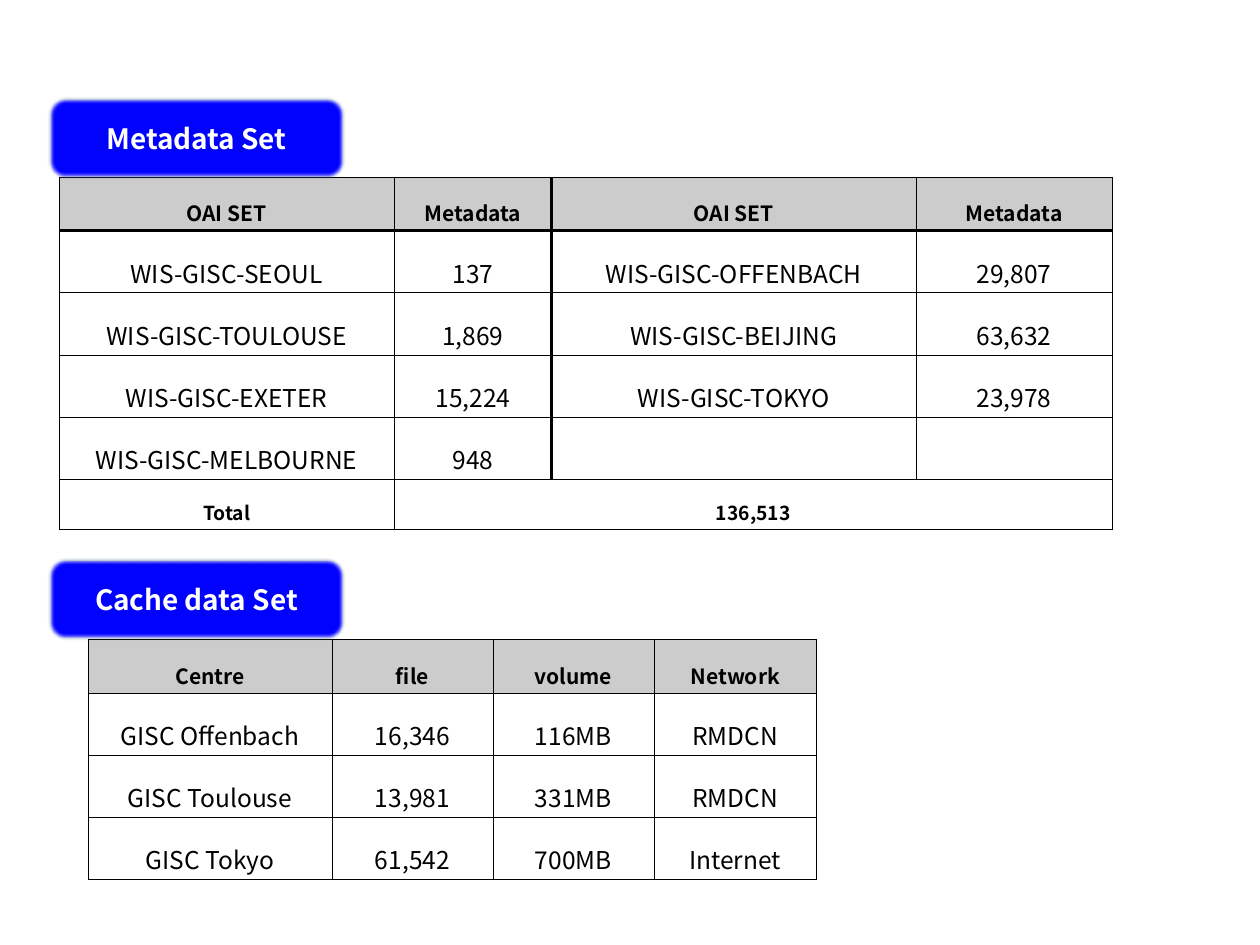
from lxml import etree
from pptx import Presentation
from pptx.dml.color import RGBColor
from pptx.enum.shapes import MSO_SHAPE
from pptx.enum.text import MSO_ANCHOR, PP_ALIGN
from pptx.oxml.ns import qn
from pptx.util import Pt

ROUNDED = MSO_SHAPE.ROUNDED_RECTANGLE
MIDDLE = MSO_ANCHOR.MIDDLE
CENTER = PP_ALIGN.CENTER
FONT = "Noto Sans CJK KR"
BLACK, WHITE, GREY, BLUE, EDGE = "000000", "FFFFFF", "CCCCCC", "0000FF", "3A5F8C"
THICK = 1.98
HEADER_HEIGHT, BODY_HEIGHT, TOTAL_HEIGHT = 30, 35.2, 28.2
BADGE_LEFT, BADGE_WIDTH, BADGE_HEIGHT = 28.1, 168.5, 45.4

SECTIONS = [
    {
        "heading": "Metadata Set", "badge_top": 56.2,
        "left": 33.8, "top": 101, "widths": [191.5, 90, 208.1, 112.3],
        "rows": [
            ["OAI SET", "Metadata", "OAI SET", "Metadata"],
            ["WIS-GISC-SEOUL", "137", "WIS-GISC-OFFENBACH", "29,807"],
            ["WIS-GISC-TOULOUSE", "1,869", "WIS-GISC-BEIJING", "63,632"],
            ["WIS-GISC-EXETER", "15,224", "WIS-GISC-TOKYO", "23,978"],
            ["WIS-GISC-MELBOURNE", "948", "", ""],
        ],
        "total": ["Total", "136,513", "", ""],
        "thin": 0.28, "header_rule": THICK, "divider_after": 1,
    },
    {
        "heading": "Cache data Set", "badge_top": 319.7,
        "left": 50.4, "top": 365.2, "widths": [139.3, 92, 92, 93],
        "rows": [
            ["Centre", "file", "volume", "Network"],
            ["GISC Offenbach", "16,346", "116MB", "RMDCN"],
            ["GISC Toulouse", "13,981", "331MB", "RMDCN"],
            ["GISC Tokyo", "61,542", "700MB", "Internet"],
        ],
        "total": None,
        "thin": 0.25, "header_rule": 0.25, "divider_after": None,
    },
]


def color(hex_text):
    """Turn a hex string into a colour."""
    return RGBColor.from_string(hex_text)


def write(frame, text, size, bold, ink):
    """Put one centred paragraph into a text frame and return it."""
    paragraph = frame.paragraphs[0]
    paragraph.text = text
    paragraph.alignment = CENTER
    paragraph.font.name = FONT
    paragraph.font.size = Pt(size)
    paragraph.font.bold = bold
    paragraph.font.color.rgb = color(ink)
    return paragraph


def add_badge(slide, heading, top):
    """Draw the soft-edged section heading."""
    badge = slide.shapes.add_shape(
        ROUNDED, Pt(BADGE_LEFT), Pt(top), Pt(BADGE_WIDTH), Pt(BADGE_HEIGHT))
    badge.shadow.inherit = False
    badge.fill.solid()
    badge.fill.fore_color.rgb = color(BLUE)
    badge.line.color.rgb = color(EDGE)
    badge.line.width = Pt(2)
    effects = badge._element.spPr.find(qn("a:effectLst"))
    etree.SubElement(effects, qn("a:softEdge"), rad=str(Pt(2.5)))
    badge.text_frame.vertical_anchor = MIDDLE
    write(badge.text_frame, heading, 16, True, WHITE)


def set_borders(cell, widths):
    """Give a cell black borders of the given width on each side."""
    properties = cell._tc.get_or_add_tcPr()
    for side, width in widths.items():
        border = etree.SubElement(properties, qn("a:ln" + side), w=str(Pt(width)))
        fill = etree.SubElement(border, qn("a:solidFill"))
        etree.SubElement(fill, qn("a:srgbClr"), val=BLACK)


def border_widths(section, row, column, is_total):
    """Work out the four border widths of a cell."""
    thin, rule, divider = section["thin"], section["header_rule"], section["divider_after"]
    divided = divider is not None and not is_total
    return {
        "L": THICK if divided and column == divider + 1 else thin,
        "R": THICK if divided and column == divider else thin,
        "T": rule if row == 1 else thin,
        "B": rule if row == 0 else thin,
    }


def fill_cell(cell, text, size, bold, shade):
    """Set the margins, text and background of a cell."""
    cell.margin_left = cell.margin_right = Pt(5.1)
    cell.margin_top = cell.margin_bottom = Pt(1.42)
    cell.vertical_anchor = MIDDLE
    if text:
        write(cell.text_frame, text, size, bold, BLACK).line_spacing = 1.6
    if shade:
        cell.fill.solid()
        cell.fill.fore_color.rgb = color(shade)
    else:
        cell.fill.background()


def add_data_table(slide, section):
    """Draw the table of a section."""
    body_count = len(section["rows"]) - 1
    styles = [(HEADER_HEIGHT, 12, True, GREY)] + [(BODY_HEIGHT, 14, False, None)] * body_count
    rows = list(section["rows"])
    if section["total"]:
        rows.append(section["total"])
        styles.append((TOTAL_HEIGHT, 11, True, None))
    widths = section["widths"]
    table = slide.shapes.add_table(
        len(rows), len(widths), Pt(section["left"]), Pt(section["top"]),
        Pt(sum(widths)), Pt(sum(style[0] for style in styles))).table
    table.first_row = table.horz_banding = False
    for column, width in zip(table.columns, widths):
        column.width = Pt(width)
    for r, (texts, (height, size, bold, shade)) in enumerate(zip(rows, styles)):
        table.rows[r].height = Pt(height)
        for c, text in enumerate(texts):
            cell = table.cell(r, c)
            set_borders(cell, border_widths(section, r, c, r > body_count))
            fill_cell(cell, text, size, bold, shade)
    if section["total"]:
        last = len(rows) - 1
        table.cell(last, 1).merge(table.cell(last, len(widths) - 1))


def main():
    """Build the slide and save it."""
    deck = Presentation()
    deck.slide_width, deck.slide_height = Pt(720), Pt(540)
    slide = deck.slides.add_slide(deck.slide_layouts[6])
    for section in SECTIONS:
        add_data_table(slide, section)
    for section in SECTIONS:
        add_badge(slide, section["heading"], section["badge_top"])
    deck.save("out.pptx")


if __name__ == "__main__":
    main()
